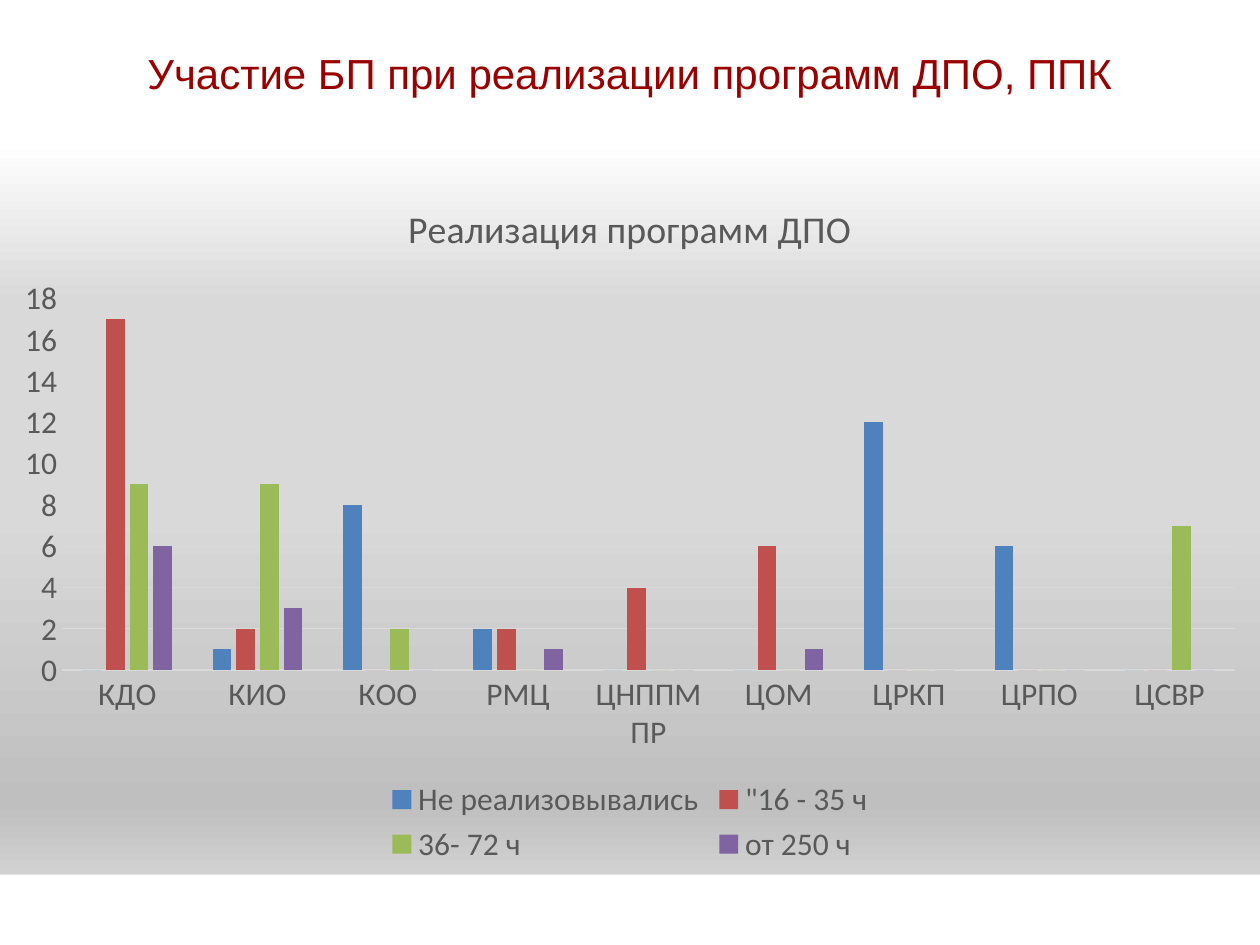
from lxml import etree
from pptx import Presentation
from pptx.chart.data import CategoryChartData
from pptx.dml.color import RGBColor
from pptx.enum.chart import XL_CHART_TYPE, XL_LEGEND_POSITION, XL_TICK_MARK
from pptx.enum.shapes import MSO_SHAPE
from pptx.enum.text import MSO_ANCHOR, PP_ALIGN
from pptx.oxml import parse_xml
from pptx.oxml.ns import nsdecls, qn
from pptx.util import Cm, Pt

RECT = MSO_SHAPE.RECTANGLE
MIDDLE = MSO_ANCHOR.MIDDLE
CENTER = PP_ALIGN.CENTER
COLUMNS = XL_CHART_TYPE.COLUMN_CLUSTERED
BOTTOM = XL_LEGEND_POSITION.BOTTOM
NO_TICK = XL_TICK_MARK.NONE

WHITE, DARK_RED, GREY, LIGHT_GREY = "FFFFFF", "990000", "595959", "D9D9D9"
STOPS = [(0, WHITE), (15, WHITE), (32, LIGHT_GREY), (54, LIGHT_GREY),
         (85, "BFBFBF"), (100, "E6E6E6")]
CENTRES = ["КДО", "КИО", "КОО", "РМЦ", "ЦНППМ ПР", "ЦОМ", "ЦРКП", "ЦРПО", "ЦСВР"]
SERIES = [
    ("Не реализовывались", "4F81BD", [0, 1, 8, 2, 0, 0, 12, 6, 0]),
    ('"16 - 35 ч', "C0504D", [17, 2, 0, 2, 4, 6, 0, 0, 0]),
    ("36- 72 ч", "9BBB59", [9, 9, 2, 0, 0, 0, 0, 0, 7]),
    ("от 250 ч", "8064A2", [6, 3, 0, 1, 0, 1, 0, 0, 0]),
]


def rgb(value):
    """Turn a hex string into a colour."""
    return RGBColor.from_string(value)


def style_font(font, size=18, color=GREY, name="Calibri", bold=False):
    """Set the look of a font."""
    font.size, font.name, font.bold = Pt(size), name, bold
    font.color.rgb = rgb(color)


def add_text(tf, text, align=CENTER, outline=None, **style):
    """Write one formatted paragraph into a text frame."""
    p = tf.paragraphs[0]
    p.alignment = align
    r = p.add_run()
    r.text = text
    style_font(r.font, **style)
    if outline:
        r.font._element.insert(0, parse_xml(
            f'<a:ln {nsdecls("a")} w="9525"><a:solidFill>'
            f'<a:srgbClr val="{outline}"/></a:solidFill></a:ln>'))


def add_background(slide):
    """Fill the slide with a vertical gradient."""
    fill = slide.background.fill
    fill.gradient()
    grad = slide.background._cSld.find(".//" + qn("a:gradFill"))
    stops = grad.find(qn("a:gsLst"))
    for old in list(stops):
        stops.remove(old)
    for position, color in STOPS:
        stop = etree.SubElement(stops, qn("a:gs"), pos=str(position * 1000))
        etree.SubElement(stop, qn("a:srgbClr"), val=color)
    grad.find(qn("a:lin")).set("ang", "5400000")


def add_band(slide, left, top, width, height):
    """Add a plain white band."""
    sp = slide.shapes.add_shape(RECT, left, top, width, height)
    sp.shadow.inherit = False
    sp.fill.solid()
    sp.fill.fore_color.rgb = rgb(WHITE)
    sp.line.fill.background()
    return sp


def add_title(slide, left, top, width, height):
    """Add the heading on its white band."""
    tf = add_band(slide, left, top, width, height).text_frame
    tf.word_wrap = True
    tf.vertical_anchor = MIDDLE
    add_text(tf, "Участие БП при реализации программ ДПО, ППК", size=24,
             color=DARK_RED, name="Arial", outline=DARK_RED)


def style_axis(axis):
    """Set the labels and ticks of an axis."""
    axis.major_tick_mark = axis.minor_tick_mark = NO_TICK
    style_font(axis.tick_labels.font)


def style_line(line):
    """Set a thin light grey line."""
    line.width = Pt(0.75)
    line.color.rgb = rgb(LIGHT_GREY)


def add_programme_chart(slide, left, top, width, height):
    """Add the column chart of programmes by centre."""
    data = CategoryChartData()
    data.categories = CENTRES
    for name, _, values in SERIES:
        data.add_series(name, values)
    chart = slide.shapes.add_chart(COLUMNS, left, top, width, height, data).chart
    style_font(chart.font, color="000000")
    add_text(chart.chart_title.text_frame, "Реализация программ ДПО", size=21.6)
    chart.chart_title.include_text_in_layout = False

    plot = chart.plots[0]
    plot.gap_width, plot.overlap = 219, -27
    plot.vary_by_categories = False
    for series, (_, color, _) in zip(plot.series, SERIES):
        series.format.fill.solid()
        series.format.fill.fore_color.rgb = rgb(color)

    style_axis(chart.category_axis)
    style_line(chart.category_axis.format.line)
    style_axis(chart.value_axis)
    chart.value_axis.format.line.fill.background()
    style_line(chart.value_axis.major_gridlines.format.line)

    chart.has_legend = True
    chart.legend.position = BOTTOM
    chart.legend.include_in_layout = False
    style_font(chart.legend.font)


def main():
    """Build and save the slide."""
    prs = Presentation()
    prs.slide_width, prs.slide_height = Cm(25.4), Cm(19.05)
    slide = prs.slides.add_slide(prs.slide_layouts[6])
    add_background(slide)
    add_band(slide, 0, Cm(17.63), prs.slide_width, Cm(1.42))
    add_title(slide, 0, 0, prs.slide_width, Cm(2.92))
    add_programme_chart(slide, 0, Cm(3.53), prs.slide_width, Cm(14))
    prs.save("out.pptx")


if __name__ == "__main__":
    main()
